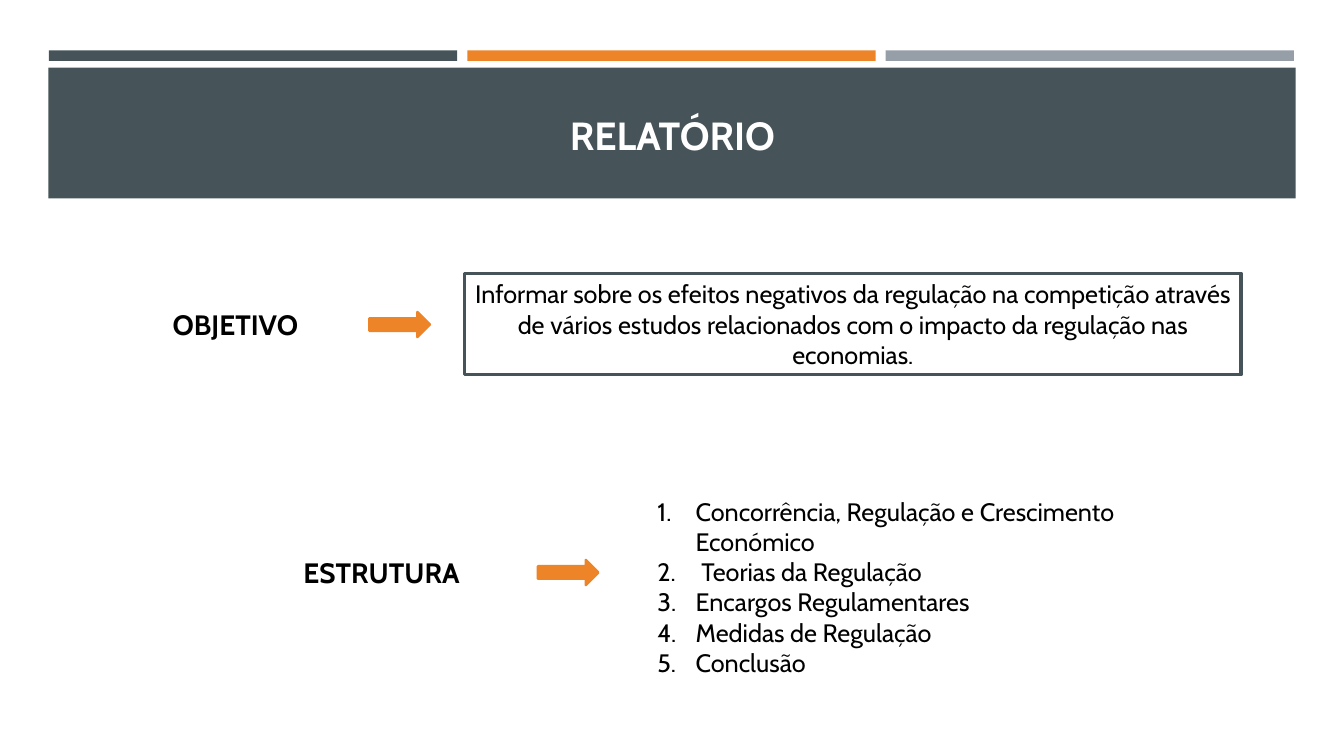
from lxml import etree
from pptx import Presentation
from pptx.dml.color import RGBColor
from pptx.enum.shapes import MSO_SHAPE
from pptx.enum.text import MSO_ANCHOR, MSO_AUTO_SIZE, PP_ALIGN
from pptx.oxml.ns import qn
from pptx.util import Inches, Pt

RECT, ARROW = MSO_SHAPE.RECTANGLE, MSO_SHAPE.RIGHT_ARROW
LEFT, CENTER = PP_ALIGN.LEFT, PP_ALIGN.CENTER
TOP, MIDDLE, BOTTOM = MSO_ANCHOR.TOP, MSO_ANCHOR.MIDDLE, MSO_ANCHOR.BOTTOM
NO_FIT = MSO_AUTO_SIZE.NONE

COLORS = {"slate": "465359", "orange": "ED8428", "gray": "969FA7",
          "white": "FFFFFF", "black": "000000"}
WIDTH, HEIGHT = Inches(13.33), Inches(7.5)

TITLE = {"size": Pt(28), "bold": True}
LABEL = {"size": Pt(20), "bold": True}
BODY = {"size": Pt(18), "bold": False}

OBJECTIVE = ("Informar sobre os efeitos negativos da regulação na competição "
             "através de vários estudos relacionados com o impacto da "
             "regulação nas economias.")
CHAPTERS = ["Concorrência, Regulação e Crescimento Económico",
            " Teorias da Regulação", "Encargos Regulamentares",
            "Medidas de Regulação", "Conclusão"]


def rgb(name):
    return RGBColor.from_string(COLORS[name])


def area(x, y, w, h):
    """Turn percentages of the slide's size into lengths."""
    return [int(share * side / 100)
            for share, side in zip((x, y, w, h), (WIDTH, HEIGHT) * 2)]


def place(shape, box):
    for name, value in zip(("left", "top", "width", "height"), area(*box)):
        setattr(shape, name, value)


def add_shape(s, kind, box, fill=None, line=None, weight=1):
    shape = s.shapes.add_shape(kind, *area(*box))
    shape.shadow.inherit = False
    if fill:
        shape.fill.solid()
        shape.fill.fore_color.rgb = rgb(fill)
    else:
        shape.fill.background()
    if line:
        shape.line.color.rgb = rgb(line)
        shape.line.width = Pt(weight)
    else:
        shape.line.fill.background()
    return shape


def write(shape, lines, style, color="black", align=CENTER, anchor=TOP):
    tf = shape.text_frame
    frame = {"word_wrap": True, "auto_size": NO_FIT, "vertical_anchor": anchor}
    for name, value in frame.items():
        setattr(tf, name, value)
    for i, line in enumerate(lines):
        p = tf.add_paragraph() if i else tf.paragraphs[0]
        p.alignment = align
        p.space_before = Pt(0)
        r = p.add_run()
        r.text = line
        r.font.color.rgb = rgb(color)
        for name, value in {"name": "Cabin", **style}.items():
            setattr(r.font, name, value)


def number(tf):
    """Number the paragraphs with a hanging indent."""
    indent = Inches(0.38)
    for p in tf.paragraphs:
        pPr = p._p.get_or_add_pPr()
        pPr.set("marL", str(indent))
        pPr.set("indent", str(-indent))
        etree.SubElement(pPr, qn("a:buAutoNum"), type="arabicPeriod")


def add_label(s, text, box):
    write(s.shapes.add_textbox(*area(*box)), [text], LABEL)


def add_arrow(s, x, y):
    add_shape(s, ARROW, (x, y, 4.5, 3.33), "orange", "orange", 1.75)


def add_header(s, text):
    for i, color in enumerate(("slate", "orange", "gray")):
        add_shape(s, RECT, (3.64 + i * 31.13, 6.67, 30.38, 1.4), color)
    add_shape(s, RECT, (3.6, 8.93, 92.8, 17.33), "slate")
    title = s.shapes.title
    place(title, (4.8, 12.93, 90.47, 8.67))
    write(title, [text], TITLE, "white", anchor=BOTTOM)
    s.shapes.element.append(title.element)  # bring in front of the band


def add_objective(s):
    add_label(s, "OBJETIVO", (10.13, 40, 14.78, 5.87))
    add_arrow(s, 27.49, 41.27)
    box = add_shape(s, RECT, (34.58, 36.13, 57.76, 13.47),
                    line="slate", weight=2.25)
    write(box, [OBJECTIVE], BODY, anchor=MIDDLE)


def add_structure(s):
    add_label(s, "ESTRUTURA", (20.48, 72.8, 15.83, 5.87))
    add_arrow(s, 40.02, 74.07)
    body = s.placeholders[1]
    place(body, (48.16, 64.93, 44.11, 21.6))
    write(body, CHAPTERS, BODY, align=LEFT)
    number(body.text_frame)


def main():
    prs = Presentation()
    prs.slide_width, prs.slide_height = WIDTH, HEIGHT
    s = prs.slides.add_slide(prs.slide_layouts[1])
    add_header(s, "RELATÓRIO")
    add_objective(s)
    add_structure(s)
    prs.save("out.pptx")


if __name__ == "__main__":
    main()
